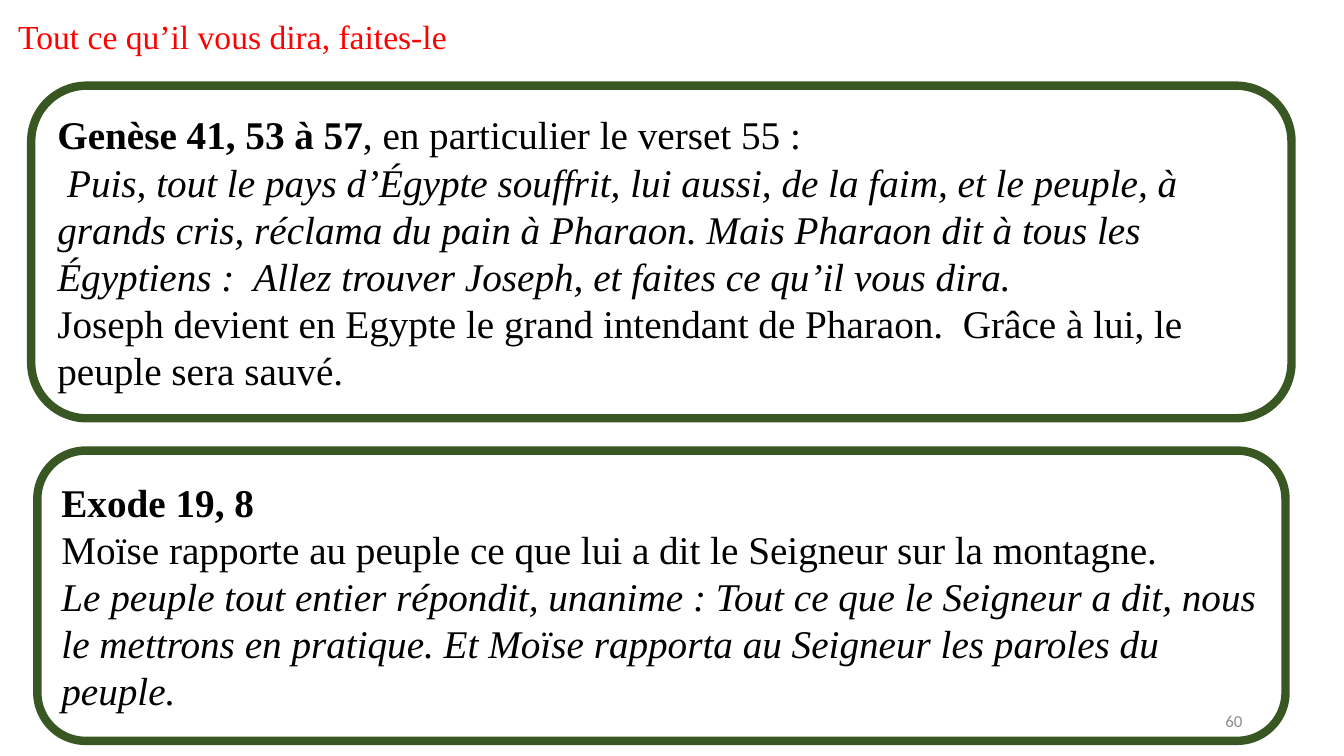
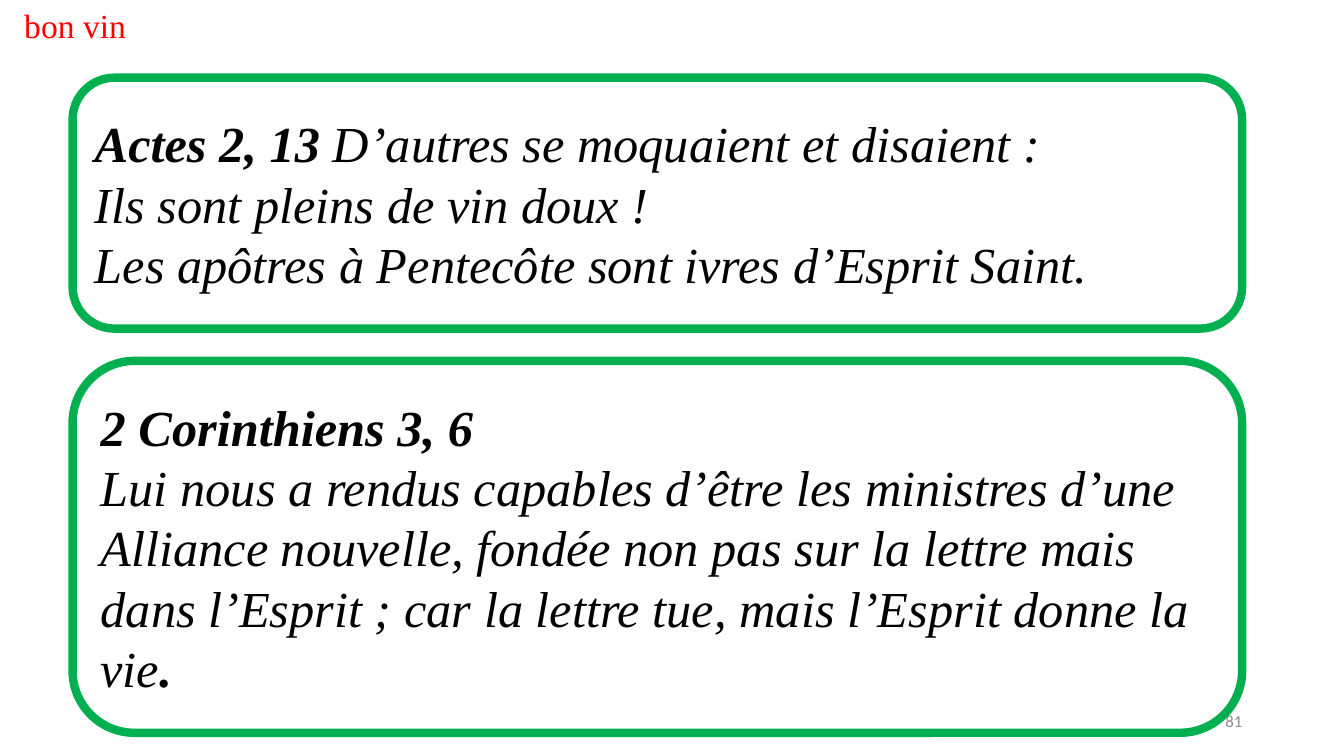
from dataclasses import dataclass

from pptx import Presentation
from pptx.dml.color import RGBColor
from pptx.enum.shapes import MSO_SHAPE
from pptx.enum.text import MSO_ANCHOR, MSO_AUTO_SIZE, PP_ALIGN
from pptx.util import Inches, Pt


@dataclass(frozen=True)
class Theme:
    serif: str = "Times New Roman"
    sans: str = "Calibri"
    ink: str = "000000"
    heading: str = "FF0000"
    number: str = "8C8C8C"
    forest: str = "385723"
    green: str = "00B050"
    heading_size: int = 24
    number_size: int = 12
    frame_line: int = 6


THEME = Theme()
PLAIN, BOLD, ITALIC, BOLD_ITALIC = (False, False), (True, False), (False, True), (True, True)
HEADING_SIZE = (5.58, 0.5)
NUMBER_BOX = (9.42, 6.95, 3, 0.4)

PAGES = [
    {
        "heading": "Tout ce qu’il vous dira, faites-le",
        "heading_at": (0.08, 0.11),
        "number": "60",
        "frame_color": THEME.forest,
        "verse_size": 28,
        "passages": [
            ((0.31, 0.85, 12.5, 3.3), [
                [("Genèse 41, 53 à 57", BOLD),
                 (", en particulier le verset 55 :\n ", PLAIN),
                 ("Puis, tout le pays d’Égypte souffrit, lui aussi, de la faim, "
                  "et le peuple, à grands cris, réclama du pain à Pharaon. "
                  "Mais Pharaon dit à tous les Égyptiens :  Allez trouver Joseph, "
                  "et faites ce qu’il vous dira.", ITALIC)],
                [("Joseph devient en Egypte le grand intendant de Pharaon.  "
                  "Grâce à lui, le peuple sera sauvé.", PLAIN)],
            ]),
            ((0.37, 4.47, 12.38, 2.88), [
                [("Exode 19, 8", BOLD)],
                [("Moïse rapporte au peuple ce que lui a dit le Seigneur "
                  "sur la montagne.", PLAIN)],
                [("Le peuple tout entier répondit, unanime : Tout ce que le "
                  "Seigneur a dit, nous le mettrons en pratique. Et Moïse rapporta "
                  "au Seigneur les paroles du peuple.", ITALIC)],
            ]),
        ],
    },
    {
        "heading": "bon vin",
        "heading_at": (0.14, 0),
        "number": "81",
        "frame_color": THEME.green,
        "verse_size": 36,
        "passages": [
            ((0.72, 0.77, 11.6, 2.49), [
                [("Actes 2, 13", BOLD_ITALIC),
                 (" D’autres se moquaient et disaient :\n"
                  "Ils sont pleins de vin doux !\n"
                  "Les apôtres à Pentecôte sont ivres d’Esprit Saint.", ITALIC)],
            ]),
            ((0.72, 3.58, 11.6, 3.69), [
                [("2 Corinthiens 3, 6", BOLD_ITALIC)],
                [("Lui nous a rendus capables d’être les ministres d’une Alliance "
                  "nouvelle, fondée non pas sur la lettre mais dans l’Esprit ; "
                  "car la lettre tue, mais l’Esprit donne la vie", ITALIC),
                 (".", BOLD_ITALIC)],
            ]),
        ],
    },
]


def style(paragraph, face, size, color, align=PP_ALIGN.LEFT):
    paragraph.alignment = align
    paragraph.font.name = face
    paragraph.font.size = Pt(size)
    paragraph.font.color.rgb = RGBColor.from_string(color)


def add_heading(slide, text, position):
    heading = slide.shapes.title
    heading.left, heading.top, heading.width, heading.height = map(
        Inches, position + HEADING_SIZE)
    frame = heading.text_frame
    frame.text = text
    frame.word_wrap = True
    frame.auto_size = MSO_AUTO_SIZE.NONE
    frame.vertical_anchor = MSO_ANCHOR.TOP
    style(frame.paragraphs[0], THEME.serif, THEME.heading_size, THEME.heading)


def add_number(slide, text):
    frame = slide.shapes.add_textbox(*map(Inches, NUMBER_BOX)).text_frame
    frame.text = text
    frame.word_wrap = True
    frame.vertical_anchor = MSO_ANCHOR.MIDDLE
    style(frame.paragraphs[0], THEME.sans, THEME.number_size, THEME.number, PP_ALIGN.RIGHT)


def add_words(paragraph, words, emphasis):
    for index, line in enumerate(words.split("\n")):
        if index:
            paragraph.add_line_break()
        run = paragraph.add_run()
        run.text = line
        run.font.bold, run.font.italic = emphasis


def add_passage(slide, box, verses, color, size):
    passage = slide.shapes.add_shape(MSO_SHAPE.ROUNDED_RECTANGLE, *map(Inches, box))
    passage.shadow.inherit = False
    passage.fill.background()
    passage.line.color.rgb = RGBColor.from_string(color)
    passage.line.width = Pt(THEME.frame_line)
    frame = passage.text_frame
    frame.word_wrap = True
    frame.vertical_anchor = MSO_ANCHOR.MIDDLE
    for index, verse in enumerate(verses):
        paragraph = frame.add_paragraph() if index else frame.paragraphs[0]
        style(paragraph, THEME.serif, size, THEME.ink)
        for words, emphasis in verse:
            add_words(paragraph, words, emphasis)


def main():
    deck = Presentation()
    deck.slide_width, deck.slide_height = Inches(13.33), Inches(7.5)
    title_only = deck.slide_layouts[5]
    for page in PAGES:
        slide = deck.slides.add_slide(title_only)
        add_heading(slide, page["heading"], page["heading_at"])
        add_number(slide, page["number"])
        for box, verses in page["passages"]:
            add_passage(slide, box, verses, page["frame_color"], page["verse_size"])
    deck.save("out.pptx")


if __name__ == "__main__":
    main()
